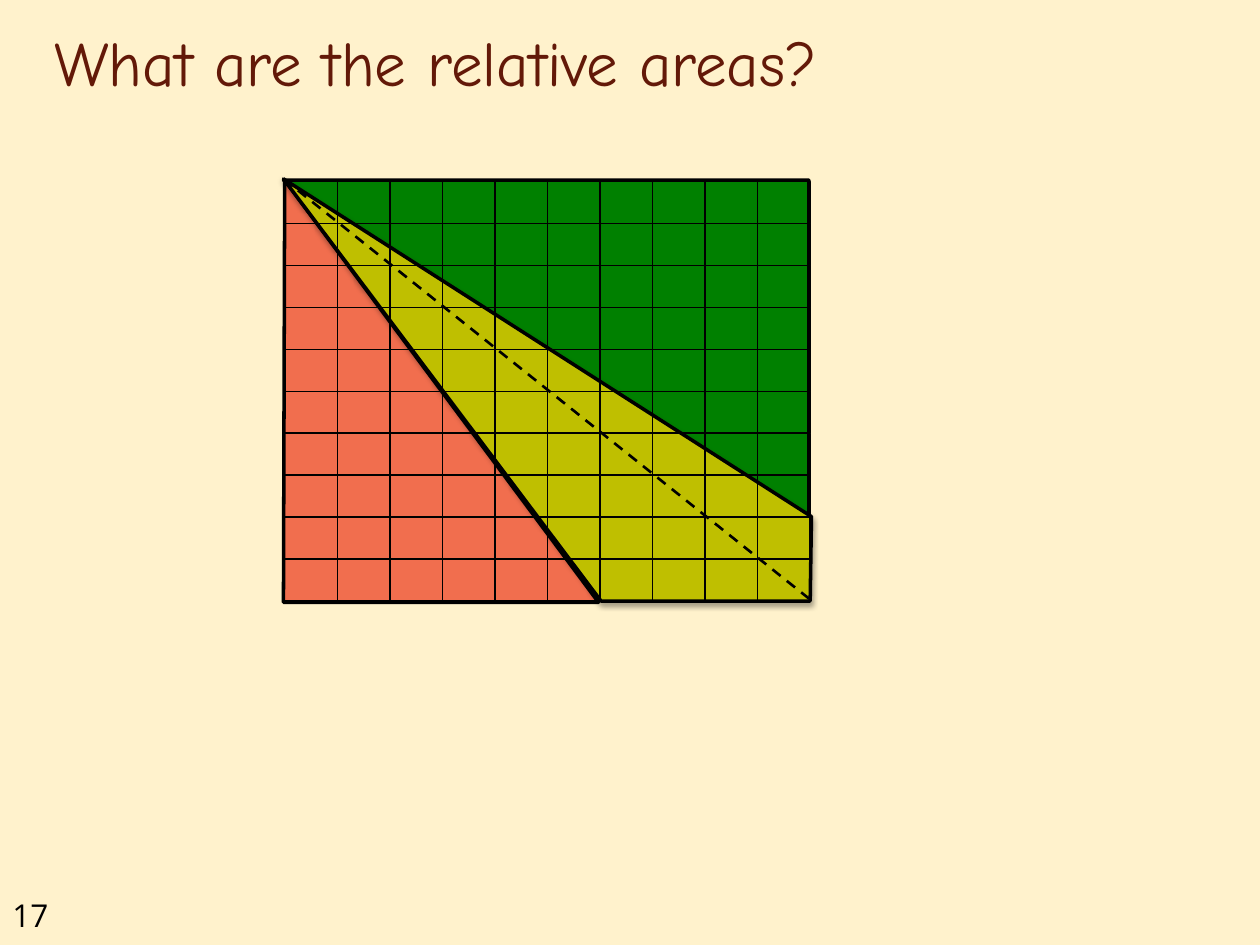
from lxml import etree
from pptx import Presentation
from pptx.dml.color import RGBColor
from pptx.enum.dml import MSO_LINE
from pptx.enum.shapes import MSO_CONNECTOR, MSO_SHAPE
from pptx.enum.text import MSO_ANCHOR, MSO_AUTO_SIZE, PP_ALIGN
from pptx.oxml import parse_xml
from pptx.oxml.ns import nsdecls, qn
from pptx.util import Inches, Pt

CREAM = RGBColor(0xFF, 0xF2, 0xCC)
MAROON = RGBColor(0x63, 0x19, 0x08)
BLACK = RGBColor(0x00, 0x00, 0x00)
CORAL = RGBColor(0xF1, 0x6E, 0x4E)
GREEN = RGBColor(0x00, 0x80, 0x00)
OLIVE = RGBColor(0xBF, 0xBF, 0x00)


def write(box, text, size, font, color, anchor):
    frame = box.text_frame
    frame.word_wrap = True
    frame.auto_size = MSO_AUTO_SIZE.NONE
    frame.vertical_anchor = anchor
    paragraph = frame.paragraphs[0]
    paragraph.alignment = PP_ALIGN.LEFT
    run = paragraph.add_run()
    run.text = text
    for attribute, value in {"size": Pt(size), "name": font}.items():
        setattr(run.font, attribute, value)
    run.font.color.rgb = color


def draw_region(points, color):
    corners = [(Inches(x), Inches(y)) for x, y in points]
    builder = slide.shapes.build_freeform(*corners[0])
    builder.add_line_segments(corners[1:], close=True)
    region = builder.convert_to_shape()
    region.shadow.inherit = False
    region.fill.solid()
    region.fill.fore_color.rgb = color
    region.line.color.rgb = BLACK
    region.line.width = Pt(2)
    return region


presentation = Presentation()
presentation.slide_width = Inches(10)
presentation.slide_height = Inches(7.5)
slide = presentation.slides.add_slide(presentation.slide_layouts[5])
slide.background.fill.solid()
slide.background.fill.fore_color.rgb = CREAM

page_number = slide.shapes.add_textbox(Inches(0), Inches(7.06), Inches(0.75), Inches(0.4))
write(page_number, "17", 18, "Open Sans", BLACK, MSO_ANCHOR.TOP)

title = slide.shapes.title
title_place = {"left": 0.33, "top": 0.17, "width": 8.5, "height": 0.67}
for attribute, value in title_place.items():
    setattr(title, attribute, Inches(value))
write(title, "What are the relative areas?", 36, "Comic Neue", MAROON, MSO_ANCHOR.BOTTOM)

draw_region([(2.26, 1.43), (4.75, 4.78), (2.25, 4.78)], CORAL)
draw_region([(6.42, 1.43), (2.25, 1.43), (6.42, 4.1)], GREEN)
middle = draw_region([(2.25, 1.42), (4.77, 4.77), (6.43, 4.77), (6.44, 4.1)], OLIVE)
middle_effects = middle.fill._xPr.find(qn("a:effectLst"))
middle_effects.append(parse_xml(
    f'<a:outerShdw {nsdecls("a")} blurRad="{Pt(3.1)}" dist="{Pt(1.8)}" dir="5400000" '
    'rotWithShape="0"><a:srgbClr val="000000"><a:alpha val="35000"/></a:srgbClr></a:outerShdw>'
))

GRID_SIZE = 10
grid_left, grid_top = Inches(2.26), Inches(1.44)
cell_width, cell_height = Inches(4.17) // GRID_SIZE, Inches(3.33) // GRID_SIZE
grid = slide.shapes.add_group_shape()
for row in reversed(range(GRID_SIZE)):
    for column in range(GRID_SIZE):
        cell = grid.shapes.add_shape(
            MSO_SHAPE.RECTANGLE,
            grid_left + column * cell_width,
            grid_top + row * cell_height,
            cell_width,
            cell_height,
        )
        cell.shadow.inherit = False
        cell.fill.background()
        cell.line.color.rgb = BLACK
        cell.line.width = Pt(0.75)

diagonal = slide.shapes.add_connector(
    MSO_CONNECTOR.STRAIGHT, Inches(2.25), Inches(1.42), Inches(6.42), Inches(4.75)
)
diagonal.line.color.rgb = BLACK
diagonal.line.width = Pt(1.5)
diagonal.line.dash_style = MSO_LINE.DASH
etree.SubElement(diagonal._element.spPr, qn("a:effectLst"))

presentation.save("out.pptx")
